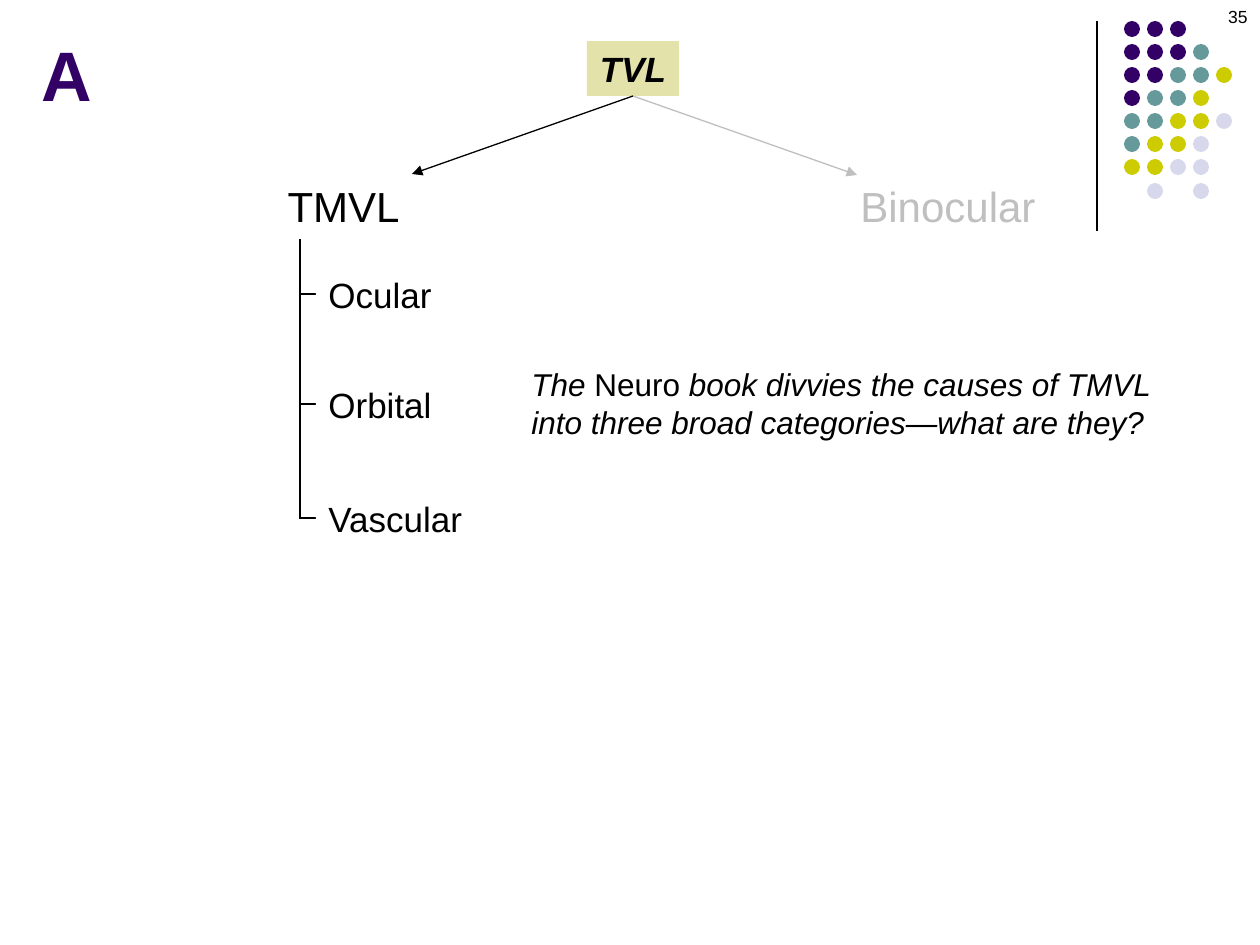
"""Build the TVL cause-tree slide."""
from lxml.etree import SubElement
from pptx import Presentation
from pptx.dml.color import RGBColor
from pptx.enum.shapes import MSO_CONNECTOR, MSO_SHAPE
from pptx.enum.text import MSO_ANCHOR, MSO_AUTO_SIZE, PP_ALIGN
from pptx.oxml.ns import qn
from pptx.util import Emu, Pt

BLACK = RGBColor(0x00, 0x00, 0x00)
WHITE = RGBColor(0xFF, 0xFF, 0xFF)
GREY = RGBColor(0xBF, 0xBF, 0xBF)
PURPLE = RGBColor(0x33, 0x00, 0x66)
TEAL = RGBColor(0x66, 0x99, 0x99)
OLIVE = RGBColor(0xCC, 0xCC, 0x00)
LILAC = RGBColor(0xD8, 0xD8, 0xEC)
SAND = RGBColor(0xE2, 0xE2, 0xAA)

DOT_COLORS = {"P": PURPLE, "T": TEAL, "O": OLIVE, "L": LILAC}
DOT_ROWS = ["PPP", "PPPT", "PPTTO", "PTTO", "TTOOL", "TOOL", "OOLL", ".L.L"]
CAUSES = [("Ocular", 267, 130), ("Orbital", 377, 130), ("Vascular", 491, 160)]


def px(n):
    return Emu(round(n * 914400 / 126))


class Deck:
    def __init__(self, width, height, font):
        self.prs = Presentation()
        self.prs.slide_width, self.prs.slide_height = px(width), px(height)
        self.font = font
        self.s = self.prs.slides.add_slide(self.prs.slide_layouts[6])

    def shape(self, kind, x, y, w, h, fill):
        sp = self.s.shapes.add_shape(kind, px(x), px(y), px(w), px(h))
        sp.shadow.inherit = False
        sp.fill.solid()
        sp.fill.fore_color.rgb = fill
        sp.line.fill.background()
        return sp

    def text(self, parts, x, y, w, h, size, color=BLACK, fill=None, bold=False,
             italics=(False,), align=PP_ALIGN.LEFT, wrap=False, grow=True):
        if fill is None:
            sp = self.s.shapes.add_textbox(px(x), px(y), px(w), px(h))
        else:
            sp = self.shape(MSO_SHAPE.RECTANGLE, x, y, w, h, fill)
        tf = sp.text_frame
        tf.word_wrap = wrap
        tf.auto_size = MSO_AUTO_SIZE.SHAPE_TO_FIT_TEXT if grow else MSO_AUTO_SIZE.NONE
        tf.vertical_anchor = MSO_ANCHOR.TOP
        p = tf.paragraphs[0]
        p.alignment = align
        for part, italic in zip(parts, italics):
            r = p.add_run()
            r.text = part
            r.font.name, r.font.size = self.font, Pt(size)
            r.font.bold, r.font.italic = bold, italic
            r.font.color.rgb = color

    def line(self, x1, y1, x2, y2, color=BLACK, arrow=False):
        cx = self.s.shapes.add_connector(
            MSO_CONNECTOR.STRAIGHT, px(x1), px(y1), px(x2), px(y2))
        cx.line.color.rgb = color
        cx.line.width = Pt(0.75)
        if arrow:
            SubElement(cx.line._get_or_add_ln(), qn("a:tailEnd"), type="triangle")
        SubElement(cx._element.spPr, qn("a:effectLst"))

    def dots(self, x, y, size):
        for row, codes in enumerate(DOT_ROWS):
            for col, code in enumerate(codes):
                if code in DOT_COLORS:
                    self.shape(MSO_SHAPE.OVAL, x + col * 23, y + row * 162 // 7,
                               size, size, DOT_COLORS[code])


def main():
    deck = Deck(1260, 945, "Arial")
    deck.line(1097, 21, 1097, 231)
    deck.dots(1124, 21, 16)
    deck.text(["35"], 966, 0, 294, 63, 10, align=PP_ALIGN.RIGHT, wrap=True, grow=False)

    deck.text(["TVL"], 587, 41, 92, 55, 20, fill=SAND, bold=True, italics=[True],
              align=PP_ALIGN.CENTER)
    deck.line(633, 96, 412, 174, arrow=True)
    deck.line(633, 96, 857, 175, GREY, arrow=True)
    deck.text(["TMVL"], 273, 174, 139, 63, 24, align=PP_ALIGN.RIGHT)
    deck.text(["Binocular"], 848, 174, 203, 63, 24, GREY)
    deck.text(["A"], 29, 25, 77, 97, 40, PURPLE, bold=True)

    deck.line(300, 239, 300, 519)
    for cause, top, width in CAUSES:
        deck.line(300, top + 27, 330, top + 27)
        deck.text([cause], 316, top, width, 55, 20, fill=WHITE)

    deck.text(["The ", "Neuro",
               " book divvies the causes of TMVL into three broad categories—what are they?"],
              519, 359, 654, 89, 18, italics=[True, False, True], wrap=True)
    deck.prs.save("out.pptx")


if __name__ == "__main__":
    main()
